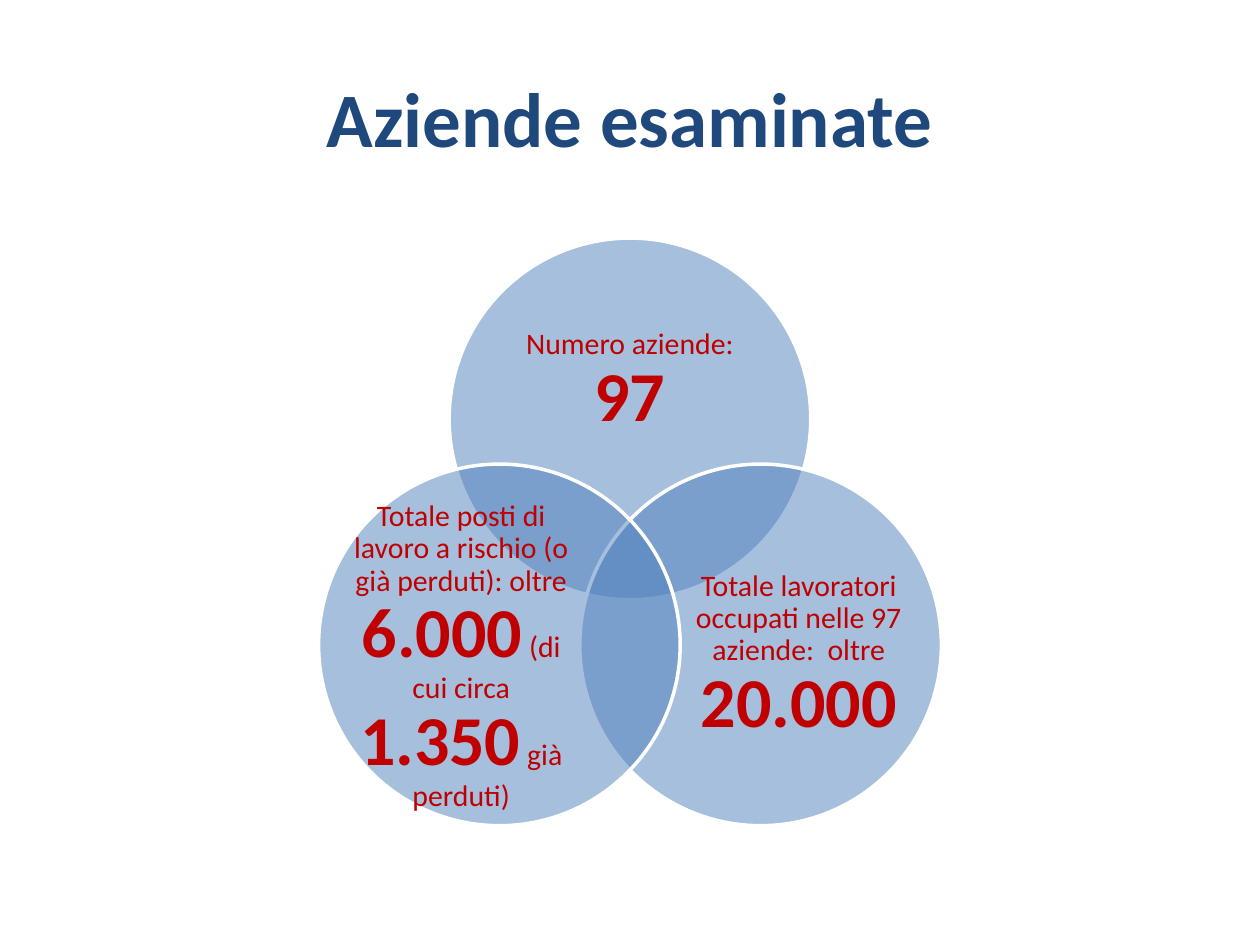
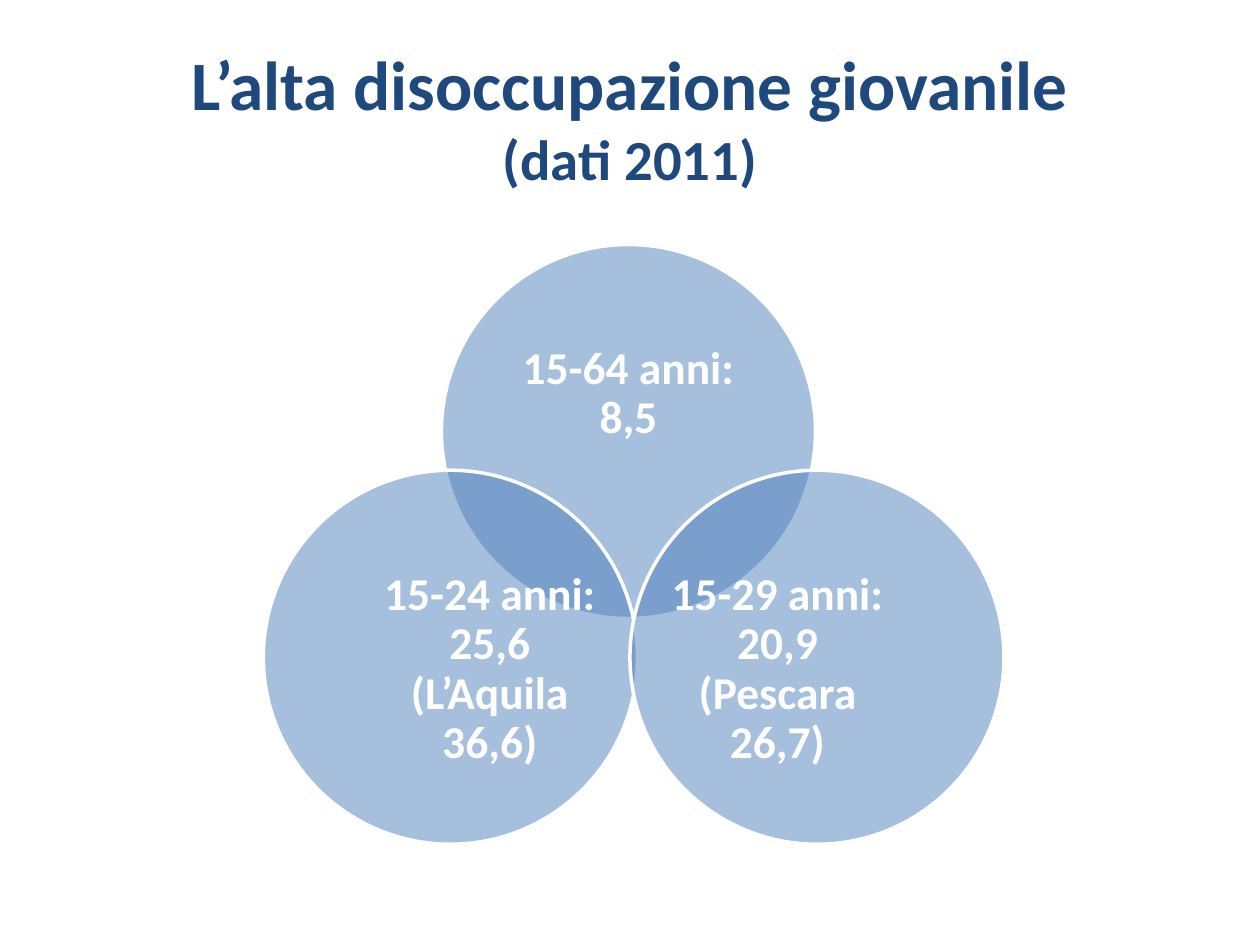
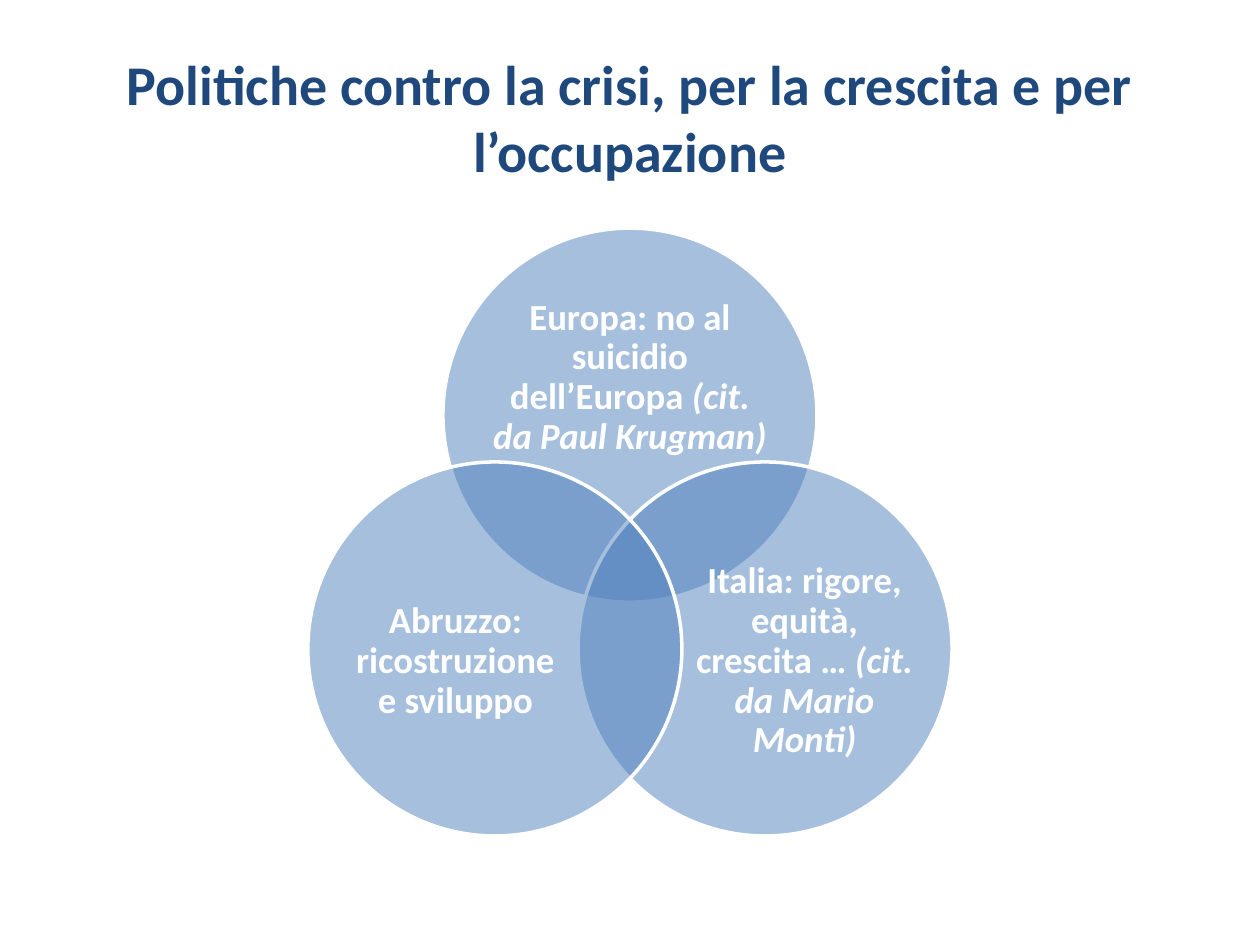
import pptx
import pptx.util
import pptx.dml.color
import pptx.enum.shapes
import pptx.enum.text
import pptx.oxml
import pptx.oxml.ns
from dataclasses import dataclass
from pptx.util import Cm


@dataclass(frozen=True)
class Theme:
    font: str = "Calibri"
    title: str = "1F497D"
    circle: str = "4F81BD"
    outline: str = "FFFFFF"
    outline_width: float = 2
    opacity: int = 50
    label: str = "FFFFFF"
    accent: str = "C00000"
    figure_size: float = 40
    line_spacing: float = 0.9


THEME = Theme()
FIGURE = {"size": THEME.figure_size, "bold": True}
CITATION = {"italic": True}

VENNS = [
    {
        "title": [("Aziende esaminate", {"size": 44})],
        "diameter": 7.29, "center": 12.7, "top": 4.8,
        "format": {"size": 17, "color": THEME.accent, "bold": False},
        "circles": [
            ("top", "top", [("Numero aziende: ", {}), ("97", FIGURE)]),
            ("right", "right", [
                ("Totale lavoratori occupati nelle 97 aziende:  oltre ", {}),
                ("20.000", FIGURE),
            ]),
            ("left", "left", [
                ("Totale posti di lavoro a rischio (o già perduti): oltre ", {}),
                ("6.000", FIGURE),
                (" (di cui circa ", {}),
                ("1.350", FIGURE),
                (" già perduti)", {}),
            ]),
        ],
    },
    {
        "title": [
            ("L’alta disoccupazione giovanile", {"size": 39.6}),
            ("\n", {}),
            ("(dati 2011)", {"size": 32.4}),
        ],
        "diameter": 7.54, "center": 12.67, "top": 4.93,
        "shifts": {"top": (0, 0), "left": (-3.59, 4.55), "right": (3.8, 4.55)},
        "format": {"size": 26, "color": THEME.label, "bold": True},
        "circles": [
            ("top", "top", [("15-64 anni: 8,5", {})]),
            ("left", "right", [("15-24 anni: 25,6 (L’Aquila 36,6)", {})]),
            ("right", "left", [("15-29 anni: 20,9 (Pescara 26,7)", {})]),
        ],
    },
    {
        "title": [
            ("Politiche contro la crisi, per la crescita e per l’occupazione", {"size": 32}),
        ],
        "diameter": 7.54, "center": 12.7, "top": 4.6,
        "format": {"size": 21, "color": THEME.label, "bold": True},
        "circles": [
            ("top", "top", [
                ("Europa: no al suicidio dell’Europa ", {}),
                ("(cit. da Paul Krugman)", CITATION),
            ]),
            ("right", "right", [
                ("Italia: rigore, equità, crescita … ", {}),
                ("(cit. da Mario Monti)", CITATION),
            ]),
            ("left", "left", [("Abruzzo: ricostruzione e sviluppo", {})]),
        ],
    },
]

CIRCLE_SHIFTS = {"top": (0, 0), "right": (13 / 36, 5 / 8), "left": (-13 / 36, 5 / 8)}
LABEL_FRAMES = {
    "top": (2 / 15, 7 / 40, 11 / 15, 0.45),
    "right": (11 / 36, 31 / 120, 0.6, 0.55),
    "left": (17 / 180, 31 / 120, 0.6, 0.55),
}
TITLE_FRAME = (1.27, 0.76, 22.86, 3.18)


def rgb(color):
    return pptx.dml.color.RGBColor.from_string(color)


def add_text(page, frame, spans, *, size=None, color=None, bold=False, inset=0, spacing=1.0):
    box = page.shapes.add_textbox(*map(Cm, frame))
    body = box.text_frame
    body.word_wrap = True
    body.vertical_anchor = pptx.enum.text.MSO_ANCHOR.MIDDLE
    body.margin_left = body.margin_right = Cm(2 * inset)
    body.margin_top = body.margin_bottom = Cm(inset)
    para = body.paragraphs[0]
    para.alignment = pptx.enum.text.PP_ALIGN.CENTER
    para.line_spacing = spacing
    for text, changes in spans:
        if text == "\n":
            para.add_line_break()
            continue
        span = para.add_run()
        span.text = text
        span.font.name = THEME.font
        span.font.size = pptx.util.Pt(changes.get("size", size))
        span.font.bold = changes.get("bold", bold)
        span.font.italic = changes.get("italic", False)
        span.font.color.rgb = rgb(color)


def add_circle(page, left, top, diameter):
    circle = page.shapes.add_shape(
        pptx.enum.shapes.MSO_SHAPE.OVAL, Cm(left), Cm(top), Cm(diameter), Cm(diameter))
    circle.shadow.inherit = False
    circle.fill.solid()
    circle.fill.fore_color.rgb = rgb(THEME.circle)
    fill_color = circle.fill._xPr.find(".//" + pptx.oxml.ns.qn("a:srgbClr"))
    alpha = pptx.oxml.parse_xml(
        f'<a:alpha {pptx.oxml.ns.nsdecls("a")} val="{THEME.opacity * 1000}"/>')
    fill_color.append(alpha)
    circle.line.color.rgb = rgb(THEME.outline)
    circle.line.width = pptx.util.Pt(THEME.outline_width)


def add_venn(page, venn):
    diameter = venn["diameter"]
    shifts = venn.get("shifts") or {
        place: (across * diameter, down * diameter)
        for place, (across, down) in CIRCLE_SHIFTS.items()
    }
    for place, label_side, spans in venn["circles"]:
        across, down = shifts[place]
        left = venn["center"] - diameter / 2 + across
        top = venn["top"] + down
        add_circle(page, left, top, diameter)
        x, y, width, height = (share * diameter for share in LABEL_FRAMES[label_side])
        add_text(page, (left + x, top + y, width, height), spans,
                 spacing=THEME.line_spacing, **venn["format"])


def main():
    deck = pptx.Presentation()
    deck.slide_width, deck.slide_height = Cm(25.4), Cm(19.05)
    for venn in VENNS:
        page = deck.slides.add_slide(deck.slide_layouts[6])
        add_text(page, TITLE_FRAME, venn["title"], color=THEME.title, bold=True, inset=0.13)
        add_venn(page, venn)
    deck.save("out.pptx")


if __name__ == "__main__":
    main()
